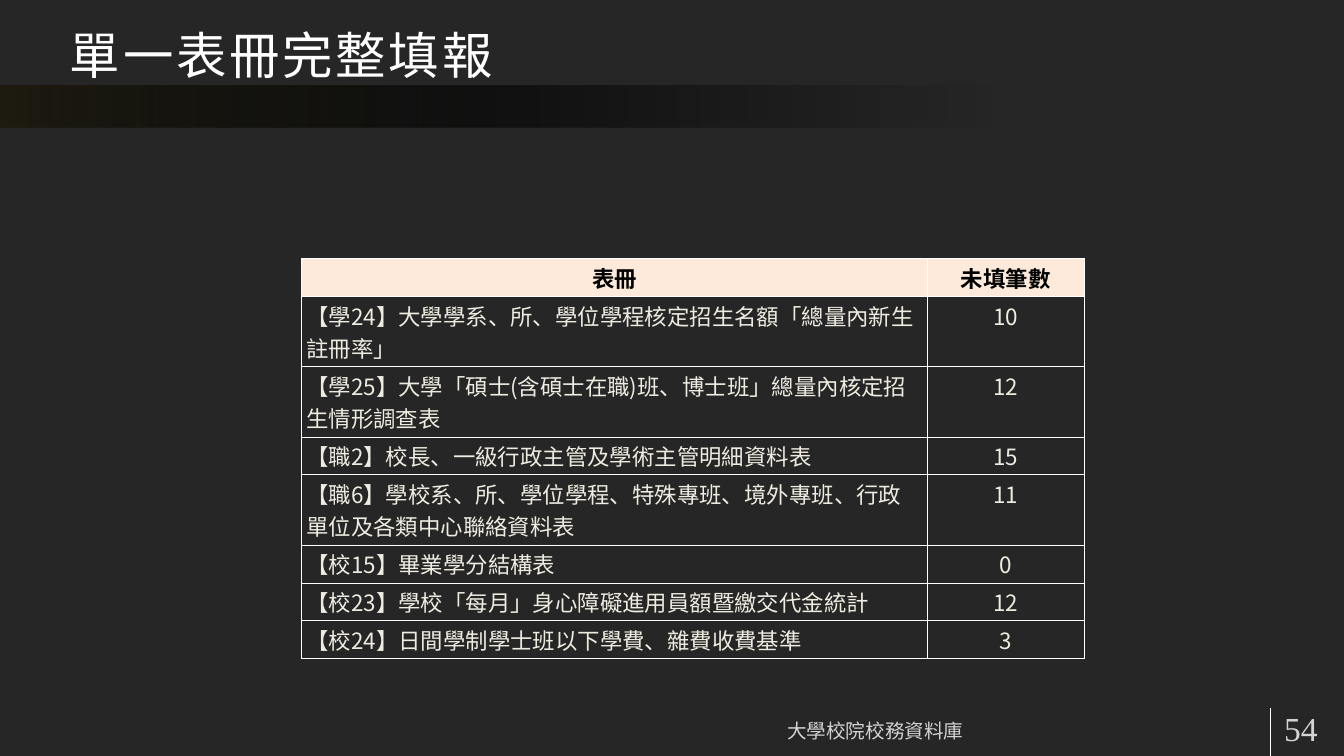
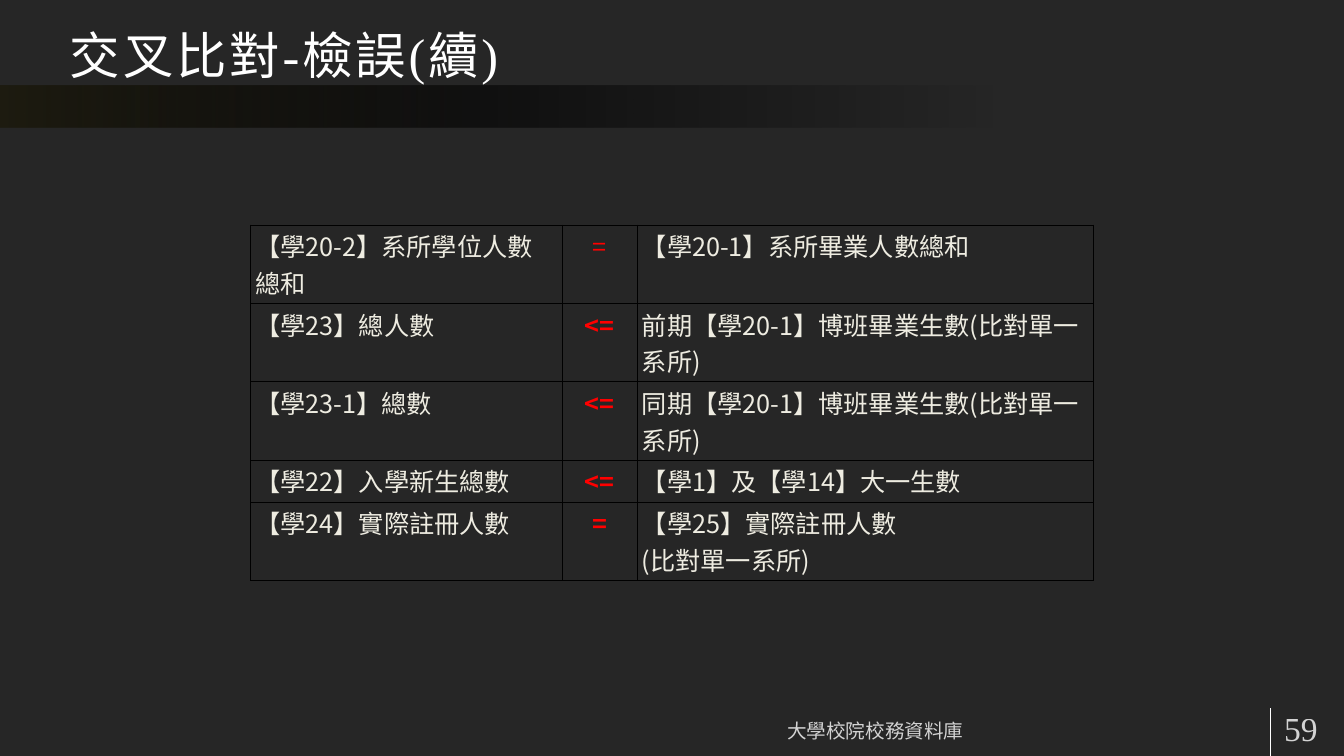
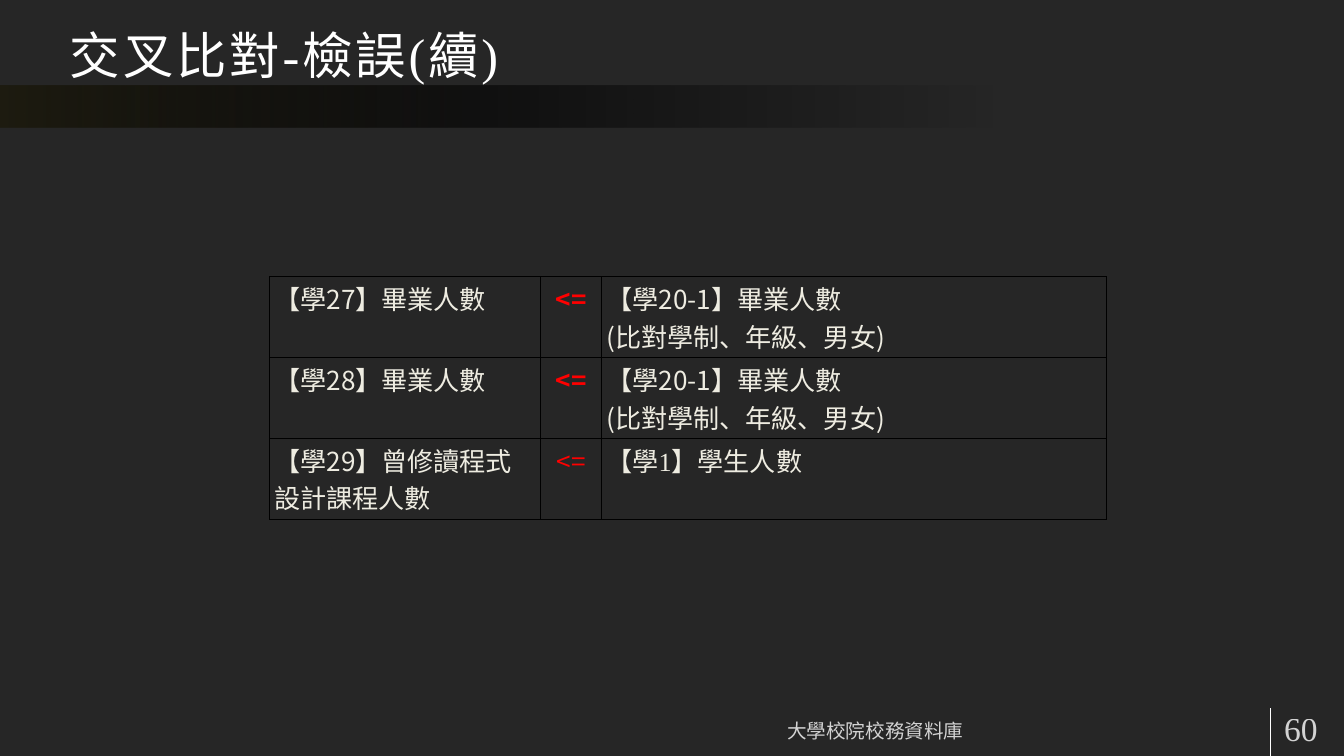
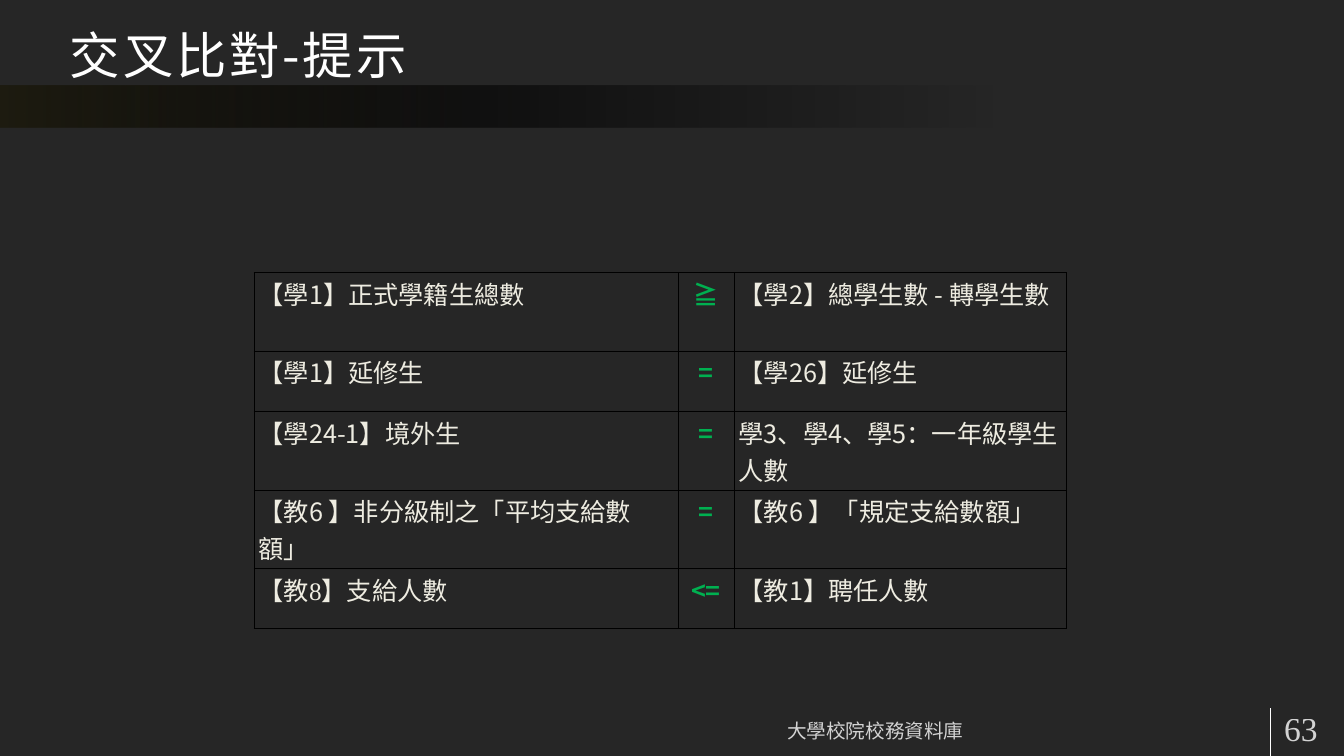
"""Build four slides of reporting tables for the university database."""
from lxml.etree import SubElement
from pptx import Presentation
from pptx.dml.color import RGBColor
from pptx.enum.shapes import MSO_CONNECTOR as Connector, MSO_SHAPE as Preset
from pptx.enum.text import MSO_ANCHOR as Anchor, MSO_AUTO_SIZE as AutoSize, PP_ALIGN as Align
from pptx.oxml import parse_xml
from pptx.oxml.ns import nsdecls, qn
from pptx.util import Cm, Pt

COLORS = {
    "background": "262626",
    "white": "FFFFFF",
    "black": "000000",
    "band": "1E1C11",
    "header": "FDEADA",
    "text": "EEECE1",
    "error": "FF0000",
    "hint": "00B050",
}
SANS = "Noto Sans CJK SC"
SERIF = "Times New Roman"
FOOTER = "大學校院校務資料庫"
WIDTH, HEIGHT = 50.8, 28.58
FOOTER_TOP = 26.77
BAND_STOPS = [(0, "band", 100), (39, "black", 54), (74, "black", 0)]


class Deck:
    """Holds the shared style and the current slide."""

    def __init__(self):
        self.presentation = Presentation()
        self.presentation.slide_width = Cm(WIDTH)
        self.presentation.slide_height = Cm(HEIGHT)
        fill = self.presentation.slide_master.background.fill
        fill.solid()
        fill.fore_color.rgb = self.color("background")
        self.slide = None

    @staticmethod
    def color(name):
        return RGBColor.from_string(COLORS[name])

    def add_slide(self, title, number, title_font=SERIF):
        layout = self.presentation.slide_layouts.get_by_name("Title Only")
        self.slide = self.presentation.slides.add_slide(layout)
        self.add_band()
        self.add_rule()
        self.add_title(title, title_font)
        self.add_label(FOOTER, 18.19, 29.79, 21, Anchor.BOTTOM, Align.CENTER)
        self.add_label(str(number), 48.08, 2.92, 36, Anchor.MIDDLE, Align.LEFT)

    def add_band(self):
        band = self.slide.shapes.add_shape(Preset.RECTANGLE, 0, Cm(3.23), Cm(WIDTH), Cm(1.6))
        stops = "".join(
            f'<a:gs pos="{position * 1000}"><a:srgbClr val="{COLORS[name]}">'
            f'<a:alpha val="{opacity * 1000}"/></a:srgbClr></a:gs>'
            for position, name, opacity in BAND_STOPS
        )
        gradient = parse_xml(
            f'<a:gradFill {nsdecls("a")}><a:gsLst>{stops}</a:gsLst><a:lin ang="0"/></a:gradFill>'
        )
        band.element.spPr.insert(2, gradient)
        band.line.fill.background()
        band.shadow.inherit = False

    def add_rule(self):
        rule = self.slide.shapes.add_connector(
            Connector.STRAIGHT, Cm(48.01), Cm(FOOTER_TOP), Cm(48.01), Cm(HEIGHT)
        )
        rule.line.color.rgb = self.color("white")
        rule.line.width = Pt(0.75)
        SubElement(rule.element.spPr, qn("a:effectLst"))

    def add_title(self, text, font):
        title = self.slide.shapes.title
        title.element.getparent().append(title.element)
        title.left, title.top, title.width, title.height = Cm(2.18), 0, Cm(45.72), Cm(3.43)
        self.set_frame(title.text_frame, text, Anchor.BOTTOM, Align.LEFT)
        for run in self.style_runs(title.text_frame, "white", size=Pt(54), name=font):
            run.font._element.set("spc", "300")

    def add_label(self, text, left, width, size, anchor, align):
        label = self.slide.shapes.add_textbox(Cm(left), Cm(FOOTER_TOP), Cm(width), Cm(1.52))
        self.set_frame(label.text_frame, text, anchor, align)
        for run in self.style_runs(label.text_frame, "white", size=Pt(size), name=SERIF):
            color = next(run.font._element.iter(qn("a:srgbClr")))
            SubElement(color, qn("a:alpha"), val="80000")

    def set_frame(self, text_frame, text, anchor, align):
        text_frame.text = text
        settings = {
            "word_wrap": True, "auto_size": AutoSize.NONE, "vertical_anchor": anchor,
            "margin_left": Cm(0.46), "margin_right": Cm(0.46),
            "margin_top": Cm(0.23), "margin_bottom": Cm(0.23),
        }
        for name, value in settings.items():
            setattr(text_frame, name, value)
        text_frame.paragraphs[0].alignment = align

    def style_runs(self, text_frame, color, **settings):
        runs = [run for paragraph in text_frame.paragraphs for run in paragraph.runs]
        for run in runs:
            for name, value in settings.items():
                setattr(run.font, name, value)
            run.font.color.rgb = self.color(color)
            SubElement(run.font._element, qn("a:ea"), typeface=SANS)
        return runs

    def add_table(self, left, top, widths, heights, rows, size, border="black",
                  sign="text", header=False, special=None):
        frame = self.slide.shapes.add_table(
            len(rows), len(widths), Cm(left), Cm(top), Cm(sum(widths)), Cm(sum(heights))
        )
        table = frame.table
        table.first_row = table.horz_banding = False
        for column, width in zip(table.columns, widths):
            column.width = Cm(width)
        for row, height in zip(table.rows, heights):
            row.height = Cm(height)
        for i, values in enumerate(rows):
            for j, value in enumerate(values):
                is_header = header and i == 0
                is_sign = j == 1 and not header
                style = {"size": Pt(size), "name": SANS, "bold": is_header or is_sign}
                style.update((special or {}).get((i, j), {}))
                color = "black" if is_header else sign if is_sign else "text"
                align = Align.CENTER if is_header or j == 1 else Align.LEFT
                self.fill_cell(table.cell(i, j), value, color, align, style, border, is_header)

    def fill_cell(self, cell, text, color, align, style, border, is_header):
        cell.text = text
        margins = {"margin_left": 0.18, "margin_right": 0.18, "margin_top": 0.1, "margin_bottom": 0.1}
        for name, value in margins.items():
            setattr(cell, name, Cm(value))
        for paragraph in cell.text_frame.paragraphs:
            paragraph.alignment = align
        self.style_runs(cell.text_frame, color, **style)
        if is_header:
            cell.fill.solid()
            cell.fill.fore_color.rgb = self.color("header")
        else:
            cell.fill.background()
        properties = cell._tc.get_or_add_tcPr()
        for position, side in enumerate("LRTB"):
            properties.insert(position, parse_xml(
                f'<a:ln{side} {nsdecls("a")} w="12700"><a:solidFill>'
                f'<a:srgbClr val="{COLORS[border]}"/></a:solidFill></a:ln{side}>'
            ))


def main():
    deck = Deck()

    deck.add_slide("單一表冊完整填報", 54)
    deck.add_table(
        11.4, 9.78, [23.65, 5.92], [1.19, 2.24, 2.24, 1.19, 2.24, 1.19, 1.19, 1.19],
        [
            ("表冊", "未填筆數"),
            ("【學24】大學學系、所、學位學程核定招生名額「總量內新生註冊率」", "10"),
            ("【學25】大學「碩士(含碩士在職)班、博士班」總量內核定招生情形調查表", "12"),
            ("【職2】校長、一級行政主管及學術主管明細資料表", "15"),
            ("【職6】學校系、所、學位學程、特殊專班、境外專班、行政單位及各類中心聯絡資料表", "11"),
            ("【校15】畢業學分結構表", "0"),
            ("【校23】學校「每月」身心障礙進用員額暨繳交代金統計", "12"),
            ("【校24】日間學制學士班以下學費、雜費收費基準", "3"),
        ],
        24, border="white", header=True,
    )

    deck.add_slide("交叉比對-檢誤(續)", 59)
    deck.add_table(
        9.47, 8.51, [11.79, 2.82, 17.25], [2.46, 2.46, 2.46, 1.35, 2.46],
        [
            ("【學20-2】系所學位人數總和", "=", "【學20-1】系所畢業人數總和"),
            ("【學23】總人數", "<=", "前期【學20-1】博班畢業生數(比對單一系所)"),
            ("【學23-1】總數", "<=", "同期【學20-1】博班畢業生數(比對單一系所)"),
            ("【學22】入學新生總數", "<=", "【學1】及【學14】大一生數"),
            ("【學24】實際註冊人數", "=", "【學25】實際註冊人數\v(比對單一系所)"),
        ],
        27, sign="error", special={(0, 1): {"bold": False}},
    )

    deck.add_slide("交叉比對-檢誤(續)", 60)
    graduates = "【學20-1】畢業人數\n(比對學制、年級、男女)"
    deck.add_table(
        10.19, 10.46, [10.24, 2.31, 19.08], [2.24, 2.24, 2.46],
        [
            ("【學27】畢業人數", "<=", graduates),
            ("【學28】畢業人數", "<=", graduates),
            ("【學29】曾修讀程式設計課程人數", "<=", "【學1】學生人數"),
        ],
        28, sign="error", special={(2, 1): {"bold": False}, (2, 2): {"name": SERIF}},
    )

    deck.add_slide("交叉比對-提示", 63, SANS)
    deck.add_table(
        9.6, 10.31, [16.03, 2.11, 12.57], [2.29, 2.29, 2.46, 2.29, 2.29],
        [
            ("【學1】正式學籍生總數", "≧", "【學2】總學生數 - 轉學生數"),
            ("【學1】延修生", "=", "【學26】延修生"),
            ("【學24-1】境外生", "=", "學3、學4、學5：一年級學生人數"),
            ("【教6 】非分級制之「平均支給數額」", "=", "【教6 】「規定支給數額」"),
            ("【教8】支給人數", "<=", "【教1】聘任人數"),
        ],
        27, sign="hint", special={(4, 0): {"name": SERIF}},
    )

    deck.presentation.save("out.pptx")


if __name__ == "__main__":
    main()
